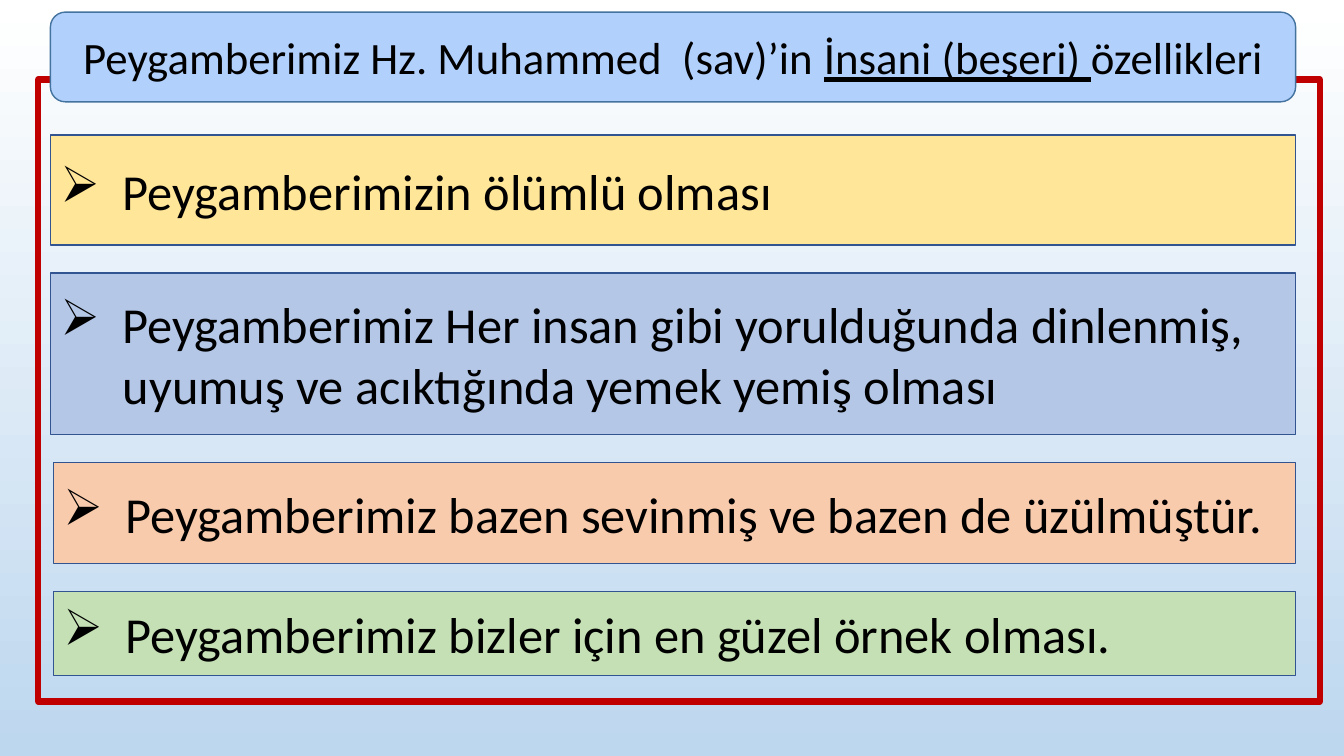
"""Build a slide on the human qualities of the Prophet."""
from dataclasses import dataclass

from lxml.etree import SubElement
from pptx import Presentation
from pptx.dml.color import RGBColor
from pptx.enum.shapes import MSO_SHAPE
from pptx.enum.text import MSO_ANCHOR, PP_ALIGN
from pptx.oxml.ns import qn
from pptx.util import Inches, Pt

TITLE = [
    ("Peygamberimiz Hz. Muhammed  (sav)’in ", False),
    ("İnsani (beşeri) ", True),
    ("özellikleri", False),
]
QUALITIES = [
    {"text": "Peygamberimizin ölümlü olması", "left": 50, "rows": 109, "fill": "FFE699"},
    {"text": "Peygamberimiz Her insan gibi yorulduğunda dinlenmiş, "
             "uyumuş ve acıktığında yemek yemiş olması",
     "left": 50, "rows": 160, "fill": "B4C7E7"},
    {"text": "Peygamberimiz bazen sevinmiş ve bazen de üzülmüştür.",
     "left": 53, "rows": 100, "fill": "F8CBAD"},
    {"text": "Peygamberimiz bizler için en güzel örnek olması.",
     "left": 53, "rows": 83, "fill": "C5E0B4"},
]

GRID_COLUMNS, GRID_ROWS = 1333, 750
FRAME = (38, 79, 1271, 617)
TITLE_BOX = (50, 12, 1235, 89)
FIRST_ROW, GAP_ROWS, RIGHT_COLUMN = 134, 28, 1285
HANGING_COLUMNS = 62


@dataclass(frozen=True)
class Theme:
    """Colours, font and sizes of the slide."""
    font: str = "Calibri"
    text: str = "000000"
    sky_top: str = "FFFFFF"
    sky_bottom: str = "BDD7EE"
    frame: str = "C00000"
    title_fill: str = "B2D0FC"
    title_line: str = "43739E"
    bar_line: str = "325491"
    title_size: int = 32
    bar_size: int = 36
    frame_width: float = 4.5
    line_width: float = 1


THEME = Theme()
presentation = Presentation()
presentation.slide_width = Inches(13.33)
presentation.slide_height = Inches(7.5)
CELL = presentation.slide_height // GRID_ROWS
slide = presentation.slides.add_slide(presentation.slide_layouts[6])


def add_box(kind, place, line, width, fill=None):
    """Add an outlined shape at a left, top, width and height in grid cells."""
    shape = slide.shapes.add_shape(kind, *(cells * CELL for cells in place))
    shape.shadow.inherit = False
    shape.line.color.rgb = RGBColor.from_string(line)
    shape.line.width = Pt(width)
    if fill:
        shape.fill.solid()
        shape.fill.fore_color.rgb = RGBColor.from_string(fill)
    else:
        shape.fill.background()
    return shape


def write(shape, runs, size, align=PP_ALIGN.LEFT, bullet=None):
    """Write runs of text and underline flags into a shape."""
    frame = shape.text_frame
    frame.word_wrap = True
    frame.vertical_anchor = MSO_ANCHOR.MIDDLE
    paragraph = frame.paragraphs[0]
    paragraph.alignment = align
    if bullet:
        properties = paragraph._p.get_or_add_pPr()
        properties.set("marL", str(HANGING_COLUMNS * CELL))
        properties.set("indent", str(-HANGING_COLUMNS * CELL))
        SubElement(properties, qn("a:buChar")).set("char", bullet)
    for text, underlined in runs:
        run = paragraph.add_run()
        run.text = text
        run.font.name = THEME.font
        run.font.size = Pt(size)
        run.font.underline = underlined
        run.font.color.rgb = RGBColor.from_string(THEME.text)


sky = slide.background.fill
sky.gradient()
sky.gradient_angle = 270
for stop, colour in zip(sky.gradient_stops, (THEME.sky_top, THEME.sky_bottom)):
    stop.color.rgb = RGBColor.from_string(colour)

add_box(MSO_SHAPE.RECTANGLE, FRAME, THEME.frame, THEME.frame_width)

top = FIRST_ROW
for quality in QUALITIES:
    place = (quality["left"], top, RIGHT_COLUMN - quality["left"], quality["rows"])
    bar = add_box(MSO_SHAPE.RECTANGLE, place, THEME.bar_line, THEME.line_width, quality["fill"])
    write(bar, [(quality["text"], False)], THEME.bar_size, bullet="➢")
    top += quality["rows"] + GAP_ROWS

title = add_box(MSO_SHAPE.ROUNDED_RECTANGLE, TITLE_BOX, THEME.title_line,
                THEME.line_width, THEME.title_fill)
write(title, TITLE, THEME.title_size, align=PP_ALIGN.CENTER)

presentation.save("out.pptx")
